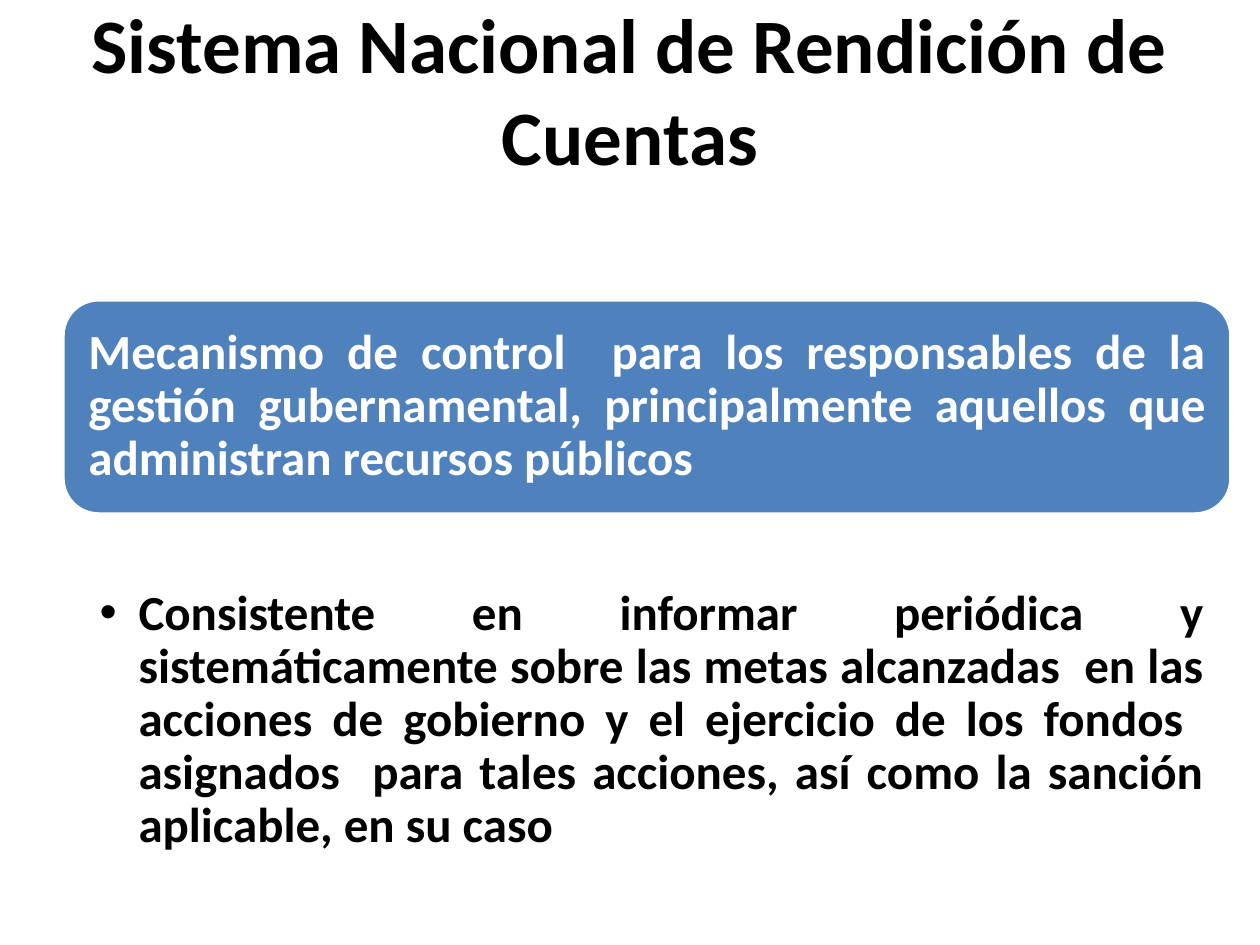
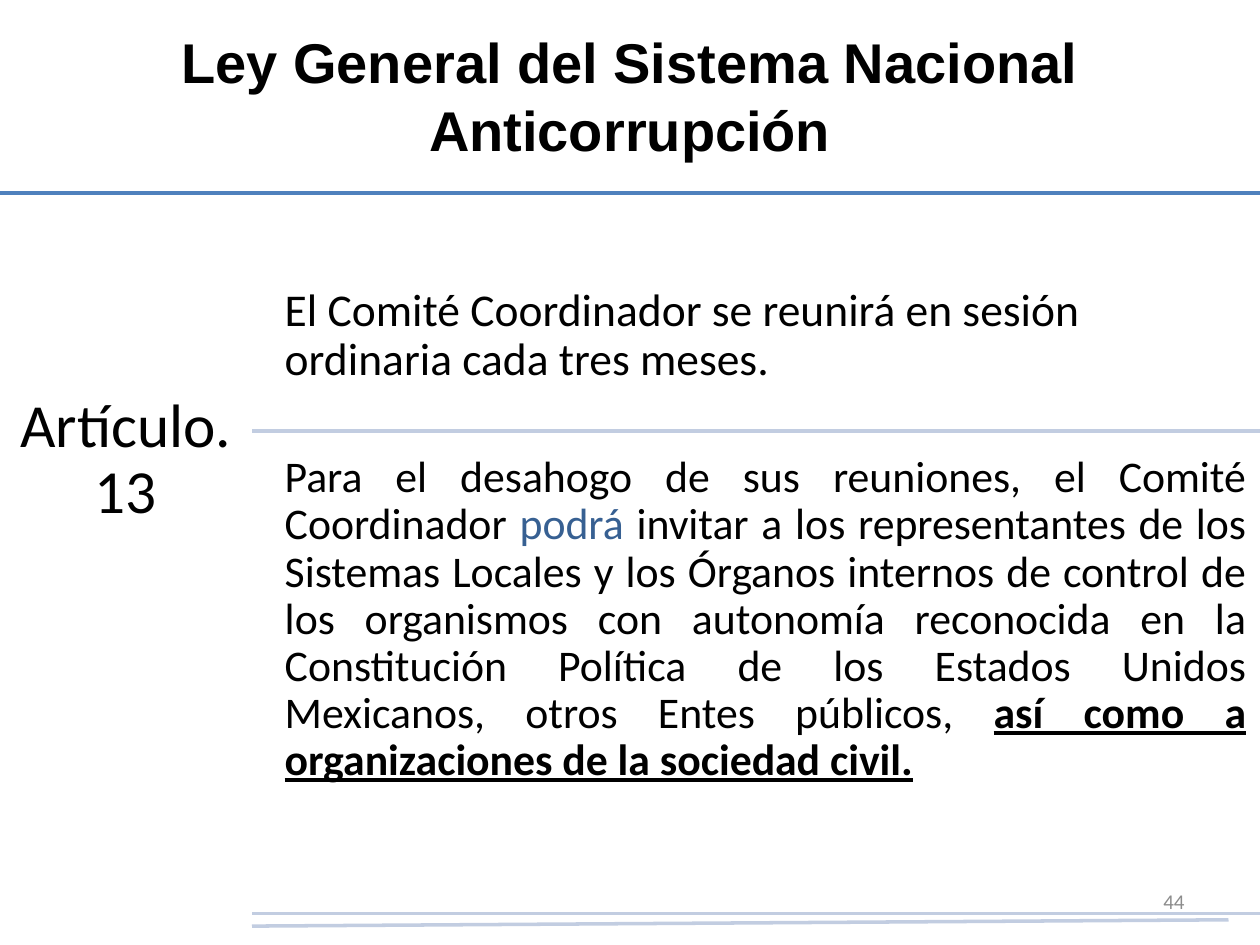
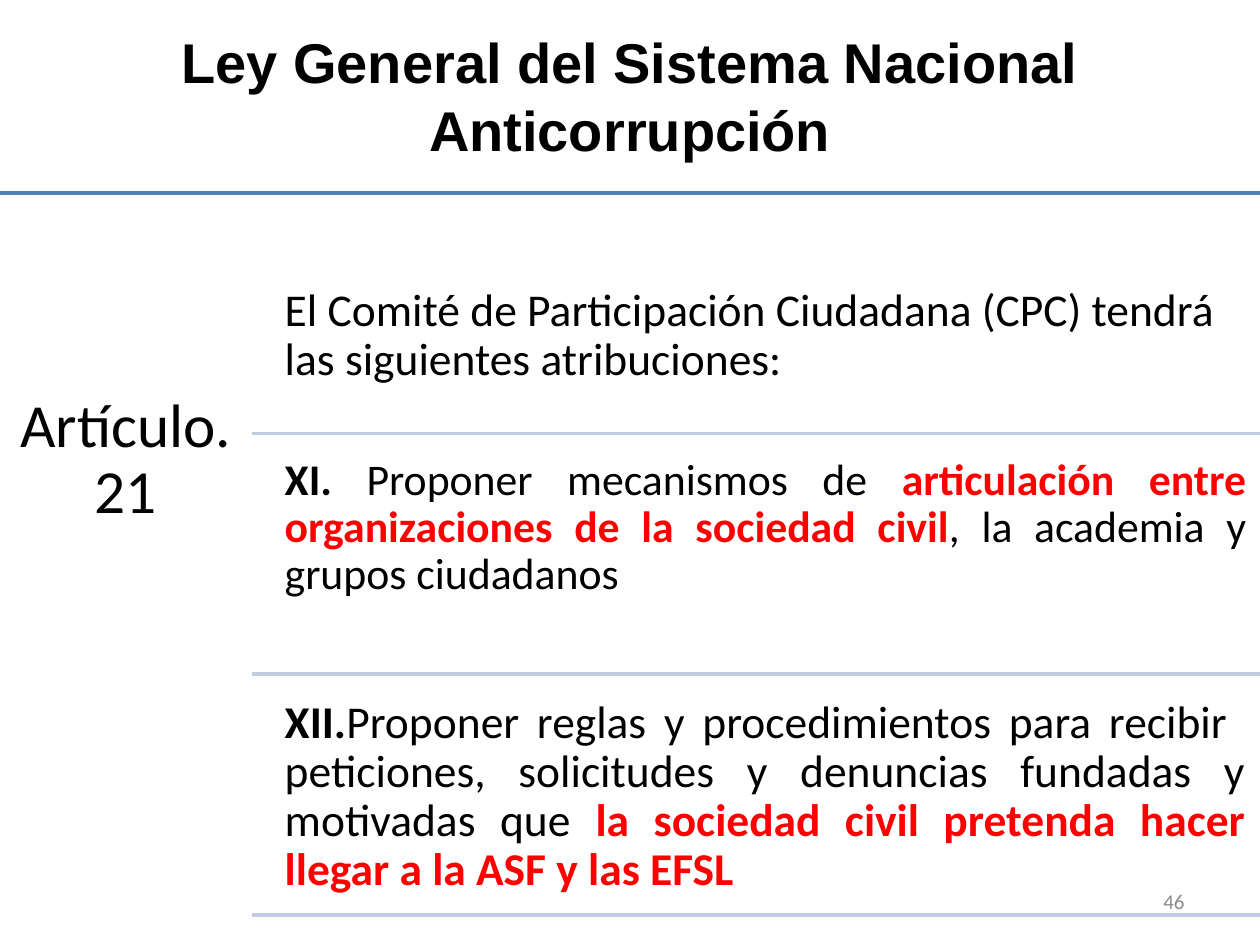
from lxml.etree import SubElement
from pptx import Presentation
from pptx.dml.color import RGBColor
from pptx.enum.shapes import MSO_CONNECTOR, MSO_SHAPE
from pptx.enum.text import MSO_ANCHOR, MSO_AUTO_SIZE, PP_ALIGN
from pptx.oxml.ns import qn
from pptx.util import Inches, Pt

WIDTH, HEIGHT = Inches(10), Inches(7.5)
COLS, ROWS = 100, 75
BLACK, WHITE, GREY = "000000", "FFFFFF", "8C8C8C"
BLUE, PALE_BLUE, DARK_BLUE, RED = "4F81BD", "C2CDE1", "376092", "FF0000"
LAW_TITLE = "Ley General del Sistema Nacional Anticorrupción"
BODY_TOP, LABEL_COLS, ROW_GAP = 15.3, 20, 0.9


def color(value):
    return RGBColor.from_string(value)


def col(n):
    return round(WIDTH * n / COLS)


def row(n):
    return round(HEIGHT * n / ROWS)


def grid(left, top, width, height):
    return col(left), row(top), col(width), row(height)


def add_run(p, text, size, font="Calibri", fill=BLACK, bold=False, underline=False):
    r = p.add_run()
    r.text = text
    r.font.name, r.font.size = font, Pt(size)
    r.font.bold, r.font.underline = bold, underline
    r.font.color.rgb = color(fill)


def setup_frame(sp, inset, anchor=MSO_ANCHOR.TOP):
    tf = sp.text_frame
    tf.word_wrap = True
    tf.auto_size = MSO_AUTO_SIZE.NONE
    tf.vertical_anchor = anchor
    left, top, right, bottom = inset
    tf.margin_left, tf.margin_right = col(left), col(right)
    tf.margin_top, tf.margin_bottom = row(top), row(bottom)
    return tf


def write(sp, runs, size, align=PP_ALIGN.LEFT, inset=(1, 0.5, 1, 0.5),
          anchor=MSO_ANCHOR.TOP, spacing=0.9):
    p = setup_frame(sp, inset, anchor).paragraphs[0]
    p.alignment = align
    p.line_spacing = spacing
    for text, style in runs:
        add_run(p, text, size, **style)
    return p


def add_text(s, place, runs, size, **options):
    return write(s.shapes.add_textbox(*grid(*place)), runs, size, **options)


def add_bullet(p, indent):
    pPr = p._p.get_or_add_pPr()
    pPr.set("marL", str(col(indent)))
    pPr.set("indent", str(-col(indent)))
    SubElement(pPr, qn("a:buFont")).set("typeface", "Arial")
    SubElement(pPr, qn("a:buChar")).set("char", "•")


def add_line(s, left, top, right, bottom, stroke):
    line = s.shapes.add_connector(MSO_CONNECTOR.STRAIGHT, col(left), row(top),
                                  col(right), row(bottom))
    line.line.color.rgb = color(stroke)
    line.line.width = Pt(2)
    SubElement(line._element.spPr, qn("a:effectLst"))


def add_titled_slide(prs, title, top, size, font):
    s = prs.slides.add_slide(prs.slide_layouts[5])
    sp = s.shapes.title
    sp.left, sp.top, sp.width, sp.height = grid(5, top, 90, 12.5)
    write(sp, [(title, dict(font=font, bold=True))], size, align=PP_ALIGN.CENTER,
          anchor=MSO_ANCHOR.MIDDLE, spacing=1.0)
    return s


def add_banner(s, place, text):
    sp = s.shapes.add_shape(MSO_SHAPE.ROUNDED_RECTANGLE, *grid(*place))
    sp.shadow.inherit = False
    sp.fill.solid()
    sp.fill.fore_color.rgb = color(BLUE)
    sp.line.color.rgb = color(WHITE)
    sp.line.width = Pt(2)
    write(sp, [(text, dict(fill=WHITE, bold=True))], 28, align=PP_ALIGN.JUSTIFY,
          inset=(1.2,) * 4, anchor=MSO_ANCHOR.MIDDLE)


def add_article_slide(prs, number, page, pitch, entries):
    s = add_titled_slide(prs, LAW_TITLE, 1.3, 32, "Arial")
    add_text(s, (71.7, 69.5, 23.3, 4), [(page, dict(fill=GREY))], 12,
             align=PP_ALIGN.RIGHT, anchor=MSO_ANCHOR.MIDDLE, spacing=1.0)
    add_line(s, 0, BODY_TOP, COLS, BODY_TOP, BLUE)
    add_text(s, (0, BODY_TOP, LABEL_COLS, 58.2), [(f"Artículo. {number}", {})], 35,
             align=PP_ALIGN.CENTER, inset=(1.5, 16, 1.5, 1.5))
    for i, (runs, size, align, top_inset) in enumerate(entries):
        top = BODY_TOP + i * pitch + ROW_GAP
        add_text(s, (21.5, top, 78.5, pitch - ROW_GAP), runs, size, align=align,
                 inset=(1.1, top_inset, 1.1, 1))
    return s


def add_separators(s, rows):
    for top in rows:
        add_line(s, LABEL_COLS, top, COLS, top, PALE_BLUE)


def accountability_slide(prs):
    s = add_titled_slide(prs, "Sistema Nacional de Rendición de Cuentas", 0.8, 44,
                         "Calibri")
    add_banner(s, (5, 23.8, 92.7, 17),
               "Mecanismo de control  para los responsables de la gestión "
               "gubernamental, principalmente aquellos que administran recursos públicos")
    p = add_text(s, (5, 40.9, 92.7, 28), [(
        "Consistente en informar periódica y sistemáticamente sobre las metas "
        "alcanzadas  en las acciones de gobierno y el ejercicio de los fondos  "
        "asignados  para tales acciones, así como la sanción aplicable, en su caso",
        dict(bold=True))], 28, align=PP_ALIGN.JUSTIFY, inset=(2.9, 5.8, 2.2, 0.4))
    add_bullet(p, 3.1)


def article_13_slide(prs):
    pitch = 18.9
    s = add_article_slide(prs, 13, "44", pitch, [
        ([("El Comité Coordinador se reunirá en sesión ordinaria cada tres meses.", {})],
         26, PP_ALIGN.LEFT, 6.6),
        ([("Para el desahogo de sus reuniones, el Comité Coordinador ", {}),
          ("podrá", dict(fill=DARK_BLUE)),
          (" invitar a los representantes de los Sistemas Locales y los Órganos "
           "internos de control de los organismos con autonomía reconocida en la "
           "Constitución Política de los Estados Unidos Mexicanos, otros Entes "
           "públicos, ", {}),
          ("así como a organizaciones de la sociedad civil.",
           dict(bold=True, underline=True))],
         25, PP_ALIGN.JUSTIFY, 1),
    ])
    add_separators(s, [BODY_TOP + pitch, 72.5])
    add_line(s, LABEL_COLS, 73.5, 97.5, 73, PALE_BLUE)


def article_21_slide(prs):
    pitch = 19.1
    strong, alert = dict(bold=True), dict(bold=True, fill=RED)
    s = add_article_slide(prs, 21, "46", pitch, [
        ([("El Comité de Participación Ciudadana (CPC) tendrá las siguientes "
           "atribuciones:", {})], 26, PP_ALIGN.LEFT, 6.6),
        ([("XI. ", strong), ("Proponer mecanismos de ", {}),
          ("articulación entre organizaciones de la sociedad civil", alert),
          (", la academia y grupos ciudadanos", {})], 25, PP_ALIGN.JUSTIFY, 1),
        ([("XII.", strong),
          ("Proponer reglas y procedimientos para recibir  peticiones, solicitudes "
           "y denuncias fundadas y motivadas que ", {}),
          ("la sociedad civil pretenda hacer llegar a la ASF y las EFSL", alert)],
         26, PP_ALIGN.JUSTIFY, 1.1),
    ])
    add_separators(s, [BODY_TOP + i * pitch for i in (1, 2, 3)])


def main():
    prs = Presentation()
    prs.slide_width, prs.slide_height = WIDTH, HEIGHT
    accountability_slide(prs)
    article_13_slide(prs)
    article_21_slide(prs)
    prs.save("out.pptx")


if __name__ == "__main__":
    main()
